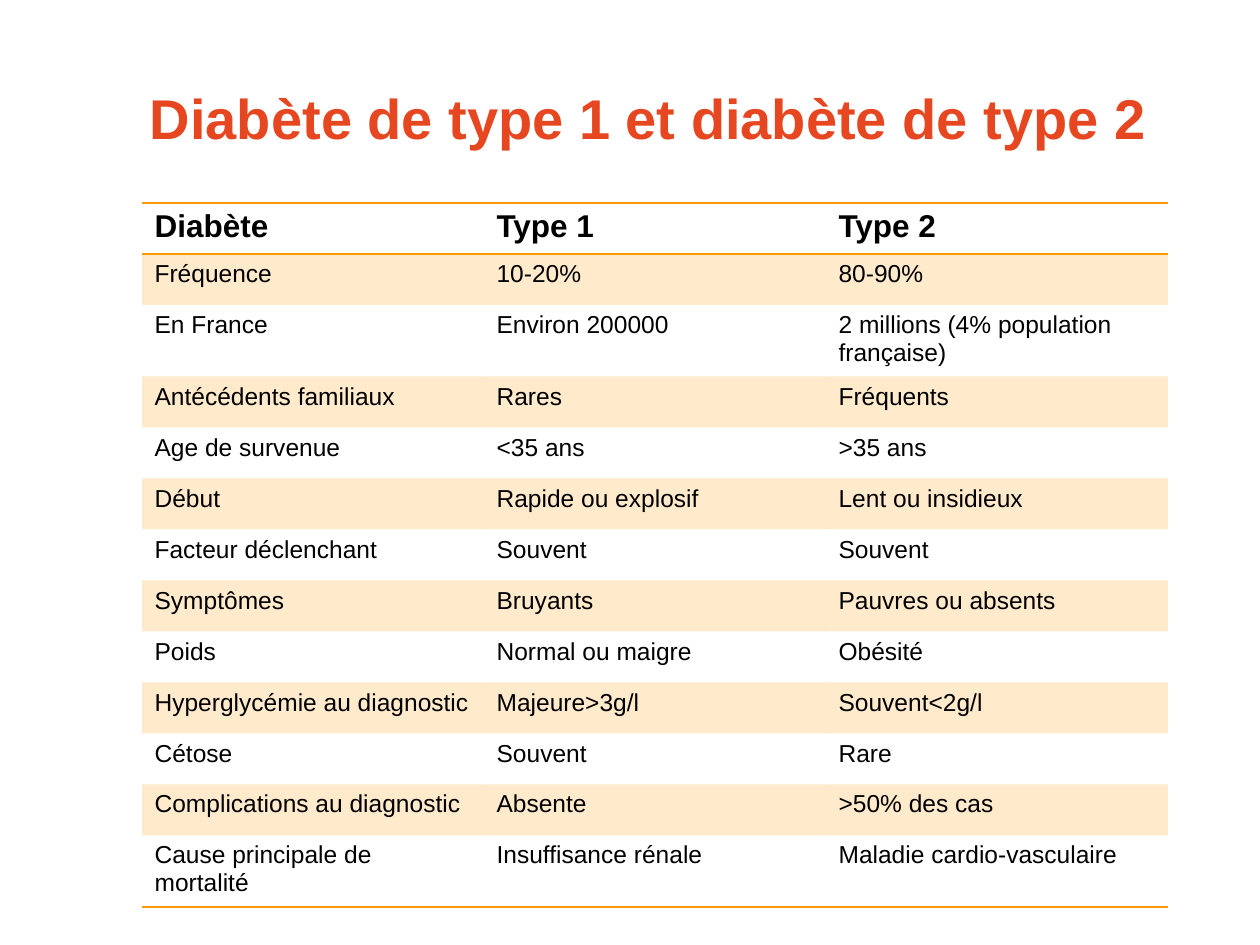
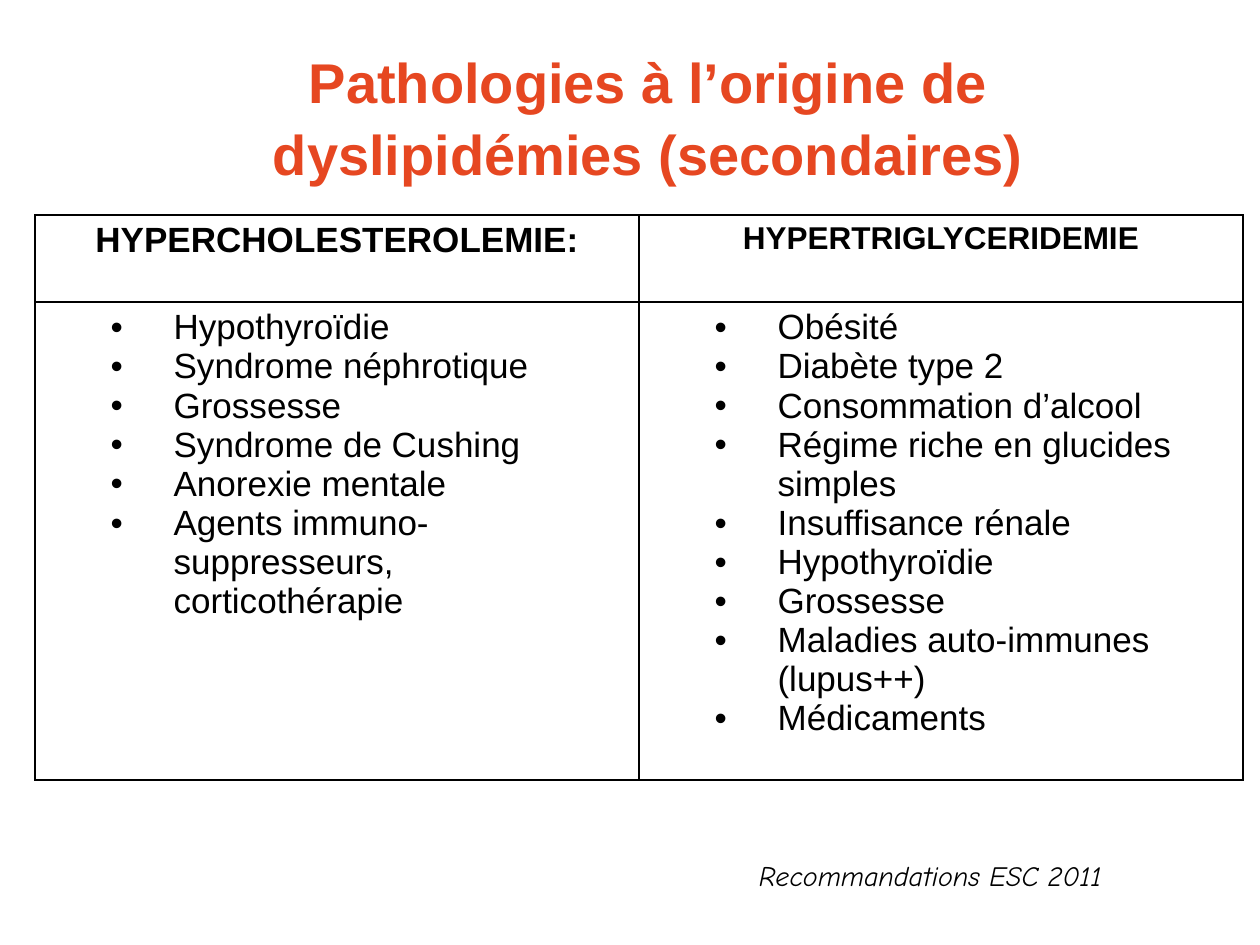
from lxml.etree import SubElement as Sub
from pptx import Presentation
from pptx.dml.color import RGBColor as Rgb
from pptx.enum.text import MSO_ANCHOR as Anchor, PP_ALIGN as Align
from pptx.oxml.ns import qn
from pptx.util import Pt

SCALE = 914400 / 126
COLORS = {"title": "E64721", "text": "000000", "band": "FF9900", "grid": "000000"}
FONT = "Arial"
BAND_ALPHA = 20

TYPES = [
    ("Diabète", "Type 1", "Type 2"),
    ("Fréquence", "10-20%", "80-90%"),
    ("En France", "Environ 200000", "2 millions (4% population française)"),
    ("Antécédents familiaux", "Rares", "Fréquents"),
    ("Age de survenue", "<35 ans", ">35 ans"),
    ("Début", "Rapide ou explosif", "Lent ou insidieux"),
    ("Facteur déclenchant", "Souvent", "Souvent"),
    ("Symptômes", "Bruyants", "Pauvres ou absents"),
    ("Poids", "Normal ou maigre", "Obésité"),
    ("Hyperglycémie au diagnostic", "Majeure>3g/l", "Souvent<2g/l"),
    ("Cétose", "Souvent", "Rare"),
    ("Complications au diagnostic", "Absente", ">50% des cas"),
    ("Cause principale de mortalité", "Insuffisance rénale",
     "Maladie cardio-vasculaire"),
]

CAUSES = [
    ("HYPERCHOLESTEROLEMIE:", 20,
     ["Hypothyroïdie", "Syndrome néphrotique", "Grossesse", "Syndrome de Cushing",
      "Anorexie mentale", "Agents immuno-suppresseurs, corticothérapie"]),
    ("HYPERTRIGLYCERIDEMIE", 18,
     ["Obésité", "Diabète type 2", "Consommation d’alcool",
      "Régime riche en glucides simples", "Insuffisance rénale", "Hypothyroïdie",
      "Grossesse", "Maladies auto-immunes (lupus++)", "Médicaments"]),
]


def px(n):
    """Turn pixels into EMU."""
    return round(n * SCALE)


def write(frame, lines, size, color="text", font=FONT, bold=False, italic=False,
          align=None, space=None, bullet=False):
    """Fill a text frame with one paragraph per line."""
    for i, line in enumerate(lines):
        para = frame.add_paragraph() if i else frame.paragraphs[0]
        para.alignment = align
        if space:
            para.line_spacing = space
        if bullet:
            para.level = 1
            props = para._p.get_or_add_pPr()
            props.set("marL", str(px(126)))
            props.set("indent", str(px(-63)))
            Sub(props, qn("a:buFont"), typeface=FONT)
            Sub(props, qn("a:buChar"), char="•")
        run = para.add_run()
        run.text = line
        run.font.name = font
        run.font.size = Pt(size)
        run.font.bold = bold
        run.font.italic = italic
        run.font.color.rgb = Rgb.from_string(COLORS[color])


def add_text(slide, text, box, anchor=Anchor.TOP, **style):
    """Place a wrapped text box."""
    frame = slide.shapes.add_textbox(*map(px, box)).text_frame
    frame.word_wrap = True
    frame.vertical_anchor = anchor
    write(frame, [text], align=Align.CENTER, **style)


def add_title(slide, text):
    """Place the shared slide title."""
    add_text(slide, text, (126, 55, 1045, 120), Anchor.MIDDLE, size=32,
             color="title", bold=True, space=1.07)


def add_grid(slide, left, top, widths, heights):
    """Place a table without style bands and return it."""
    box = map(px, (left, top, sum(widths), sum(heights)))
    table = slide.shapes.add_table(len(heights), len(widths), *box).table
    table.first_row = table.horz_banding = False
    for col, width in zip(table.columns, widths):
        col.width = px(width)
    for row, height in zip(table.rows, heights):
        row.height = px(height)
    return table


def dress(cell, color, sides, band=False):
    """Draw the given sides of a cell and its fill."""
    props = cell._tc.get_or_add_tcPr()
    for side in "LRTB":
        line = Sub(props, qn(f"a:ln{side}"), w=str(Pt(1)))
        if side in sides:
            Sub(Sub(line, qn("a:solidFill")), qn("a:srgbClr"), val=COLORS[color])
        else:
            Sub(line, qn("a:noFill"))
    if band:
        cell.fill.solid()
        cell.fill.fore_color.rgb = Rgb.from_string(COLORS["band"])
        tint = props.find(qn("a:solidFill"))[0]
        Sub(tint, qn("a:alpha"), val=str(BAND_ALPHA * 1000))
    else:
        cell.fill.background()


def show_types(slide):
    """Build the comparison of both types."""
    add_title(slide, "Diabète de type 1 et diabète de type 2")
    table = add_grid(slide, 142, 203, [342] * 3, [51] * len(TYPES))
    edges = {0: "TB", 1: "T", len(TYPES) - 1: "B"}
    for r, row in enumerate(TYPES):
        for c, text in enumerate(row):
            cell = table.cell(r, c)
            dress(cell, "band", edges.get(r, ""), band=r % 2 == 1)
            write(cell.text_frame, [text], 14 if r else 18, bold=r == 0)


def show_causes(slide):
    """Build the table of secondary causes."""
    table = add_grid(slide, 35, 215, [604] * 2, [87, 478])
    for c, (name, size, items) in enumerate(CAUSES):
        head, body = table.cell(0, c), table.cell(1, c)
        for cell in (head, body):
            dress(cell, "grid", "LRTB")
        write(head.text_frame, [name], size, bold=True, align=Align.CENTER)
        write(body.text_frame, items, 20, bullet=True)
    add_title(slide, "Pathologies à l’origine de dyslipidémies (secondaires)")
    add_text(slide, "Recommandations ESC 2011", (640, 859, 581, 49), size=16,
             font="Comic Neue", italic=True, space=0.8)


def main():
    """Build and save the deck."""
    deck = Presentation()
    deck.slide_width, deck.slide_height = px(1260), px(945)
    for show in (show_types, show_causes):
        show(deck.slides.add_slide(deck.slide_layouts[6]))
    deck.save("out.pptx")


if __name__ == "__main__":
    main()
